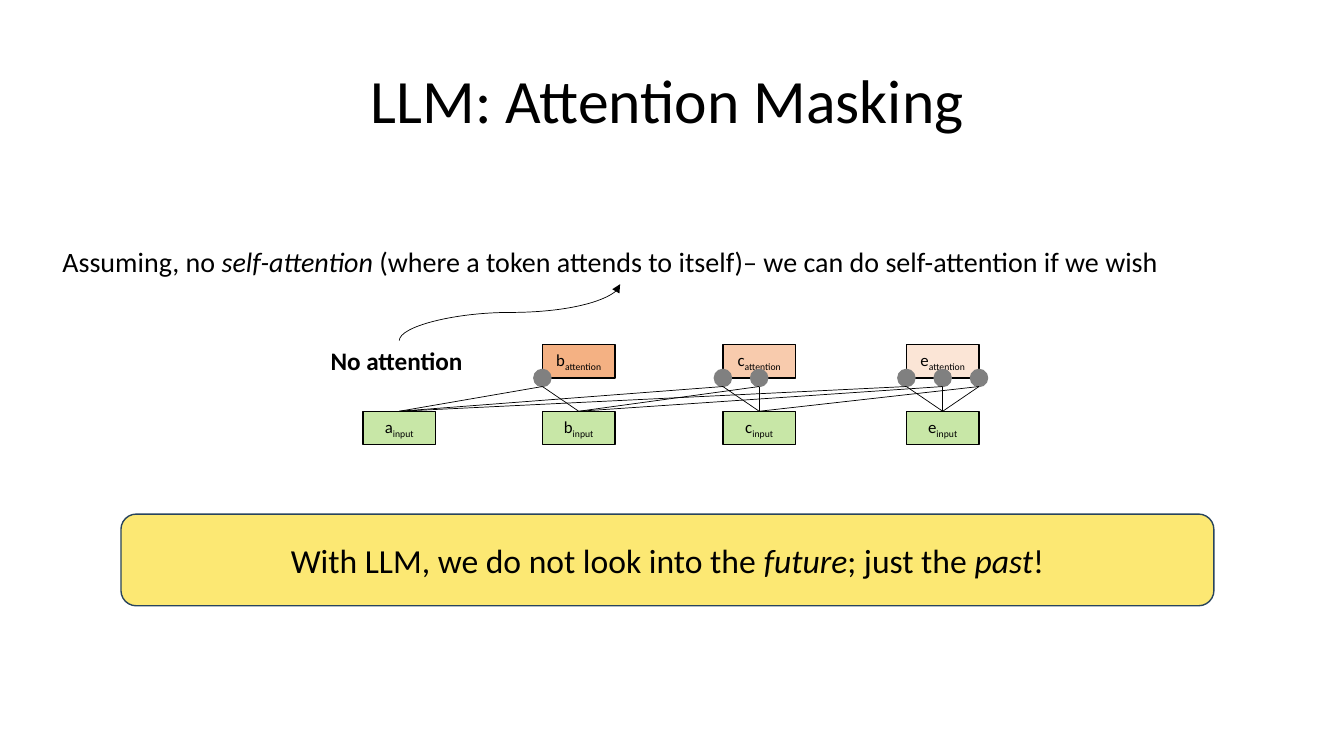
from lxml.etree import SubElement
from pptx import Presentation
from pptx.dml.color import RGBColor
from pptx.enum.shapes import MSO_CONNECTOR as LINK, MSO_SHAPE as SHAPE
from pptx.enum.text import MSO_ANCHOR as ANCHOR, MSO_AUTO_SIZE as AUTO_SIZE, PP_ALIGN as ALIGN
from pptx.oxml.ns import qn
from pptx.util import Inches, Pt

BLACK = RGBColor(0x00, 0x00, 0x00)
GREEN = RGBColor(0x92, 0xD0, 0x50)
GREY = RGBColor(0x80, 0x80, 0x80)
YELLOW = RGBColor(0xFC, 0xE8, 0x73)
NAVY = RGBColor(0x28, 0x44, 0x5D)
ORANGES = {"b": RGBColor(0xF4, 0xB1, 0x83), "c": RGBColor(0xF8, 0xCB, 0xAD),
           "e": RGBColor(0xFB, 0xE5, 0xD6)}

TOKEN_LEFTS = {"a": 0, "b": 1.78, "c": 3.57, "e": 5.39}
TOKEN_W, TOKEN_H = 0.72, 0.33
INPUT_DROP = 0.66
DOT = 0.17


def write(frame, parts, size, align=ALIGN.LEFT, anchor=ANCHOR.TOP, bold=None):
    """Write (text, style) parts as one paragraph and return it."""
    frame.vertical_anchor = anchor
    line = frame.paragraphs[0]
    line.alignment = align
    font = line.font
    font.name, font.size, font.bold = "Calibri", Pt(size), bold
    font.color.rgb = BLACK
    for text, style in parts:
        run = line.add_run()
        run.text = text
        if style == "italic":
            run.font.italic = True
        elif style == "subscript":
            run.font._element.set("baseline", "-25000")
    return line


def add_label(slide, box, parts, size, bold=None):
    """Place a one-line text box that fits its text."""
    frame = slide.shapes.add_textbox(*map(Inches, box)).text_frame
    frame.word_wrap = False
    frame.auto_size = AUTO_SIZE.SHAPE_TO_FIT_TEXT
    write(frame, parts, size, bold=bold)


def add_figure(slide, kind, box, fill, outline):
    """Place a filled shape with a one-point outline."""
    figure = slide.shapes.add_shape(kind, *map(Inches, box))
    figure.shadow.inherit = False
    figure.fill.solid()
    figure.fill.fore_color.rgb = fill
    figure.line.color.rgb = outline
    figure.line.width = Pt(1)
    return figure


def add_link(slide, kind, start, end):
    """Draw a thin black connector without a shadow."""
    link = slide.shapes.add_connector(kind, *map(Inches, start + end))
    link.line.color.rgb = BLACK
    link.line.width = Pt(0.5)
    SubElement(link._element.spPr, qn("a:effectLst"))
    return link


def add_token(slide, left, top, token, role, fill, anchor):
    """Place one token box with its role as a subscript."""
    figure = add_figure(slide, SHAPE.RECTANGLE, (left, top, TOKEN_W, TOKEN_H), fill, BLACK)
    write(figure.text_frame, [(token, None), (role, "subscript")], 12, ALIGN.CENTER, anchor)
    return figure


def add_title(slide, box):
    """Place the centred slide title."""
    frame = slide.shapes.add_textbox(*map(Inches, box)).text_frame
    frame.word_wrap = True
    title = write(frame, [("LLM: Attention Masking", None)], 44, ALIGN.CENTER, ANCHOR.MIDDLE)
    title.line_spacing = 0.9


def add_attention_diagram(slide, left, top):
    """Draw inputs, attention boxes and the links to each allowed input."""
    input_top = top + INPUT_DROP
    inputs = []
    for token, offset in TOKEN_LEFTS.items():
        figure = add_token(slide, left + offset, input_top, token, "input", GREEN, ANCHOR.MIDDLE)
        color = figure.fill._xPr.find(qn("a:solidFill"))[0]
        SubElement(color, qn("a:alpha")).set("val", "50000")
        inputs.append((figure, left + offset + TOKEN_W / 2))

    for position, (token, fill) in enumerate(ORANGES.items(), 1):
        box_left = left + TOKEN_LEFTS[token]
        add_token(slide, box_left, top, token, "attention", fill, ANCHOR.TOP)
        for past in range(position):
            dot_x = box_left + past * TOKEN_W / 2
            dot_top = top + TOKEN_H - DOT / 2
            add_figure(slide, SHAPE.OVAL, (dot_x - DOT / 2, dot_top, DOT, DOT), GREY, GREY)
            for source, source_x in (inputs[past], inputs[position]):
                link = add_link(slide, LINK.STRAIGHT, (source_x, input_top),
                                (dot_x, dot_top + DOT))
                link.begin_connect(source, 0)

    add_label(slide, (left - 0.42, top - 0.04, 1.56, 0.4), [("No attention", None)], 18, True)


def add_curved_arrow(slide, start, end):
    """Draw an S-shaped arrow that leaves and arrives vertically."""
    mid_x, mid_y = (start[0] + end[0]) / 2, (start[1] + end[1]) / 2
    half_w, half_h = (start[1] - end[1]) / 2, (end[0] - start[0]) / 2
    arrow = add_link(slide, LINK.CURVE, (mid_x + half_w, mid_y + half_h),
                     (mid_x - half_w, mid_y - half_h))
    arrow._element.spPr.find(qn("a:xfrm")).set("rot", "5400000")
    SubElement(arrow.line._get_or_add_ln(), qn("a:tailEnd")).set("type", "triangle")


def add_takeaway(slide, box):
    """Place the yellow takeaway banner."""
    banner = add_figure(slide, SHAPE.ROUNDED_RECTANGLE, box, YELLOW, NAVY)
    parts = [("With LLM, we do not look into the ", None), ("future", "italic"),
             ("; just the ", None), ("past", "italic"), ("!", None)]
    write(banner.text_frame, parts, 24, ALIGN.CENTER, ANCHOR.MIDDLE)


def main():
    """Build the slide and save it."""
    deck = Presentation()
    deck.slide_width, deck.slide_height = Inches(13.33), Inches(7.5)
    slide = deck.slides.add_slide(deck.slide_layouts[6])
    add_title(slide, (0.83, 0.3, 11.58, 1.45))
    add_attention_diagram(slide, 3.6, 3.42)
    add_label(slide, (0.52, 2.38, 11.26, 0.44),
              [("Assuming, no ", None), ("self-attention", "italic"),
               (" (where a token attends to itself)– we can do self-attention if we wish", None)],
              20)
    add_curved_arrow(slide, (3.96, 3.38), (6.15, 2.82))
    add_takeaway(slide, (1.2, 5.1, 10.84, 0.91))
    deck.save("out.pptx")


if __name__ == "__main__":
    main()
